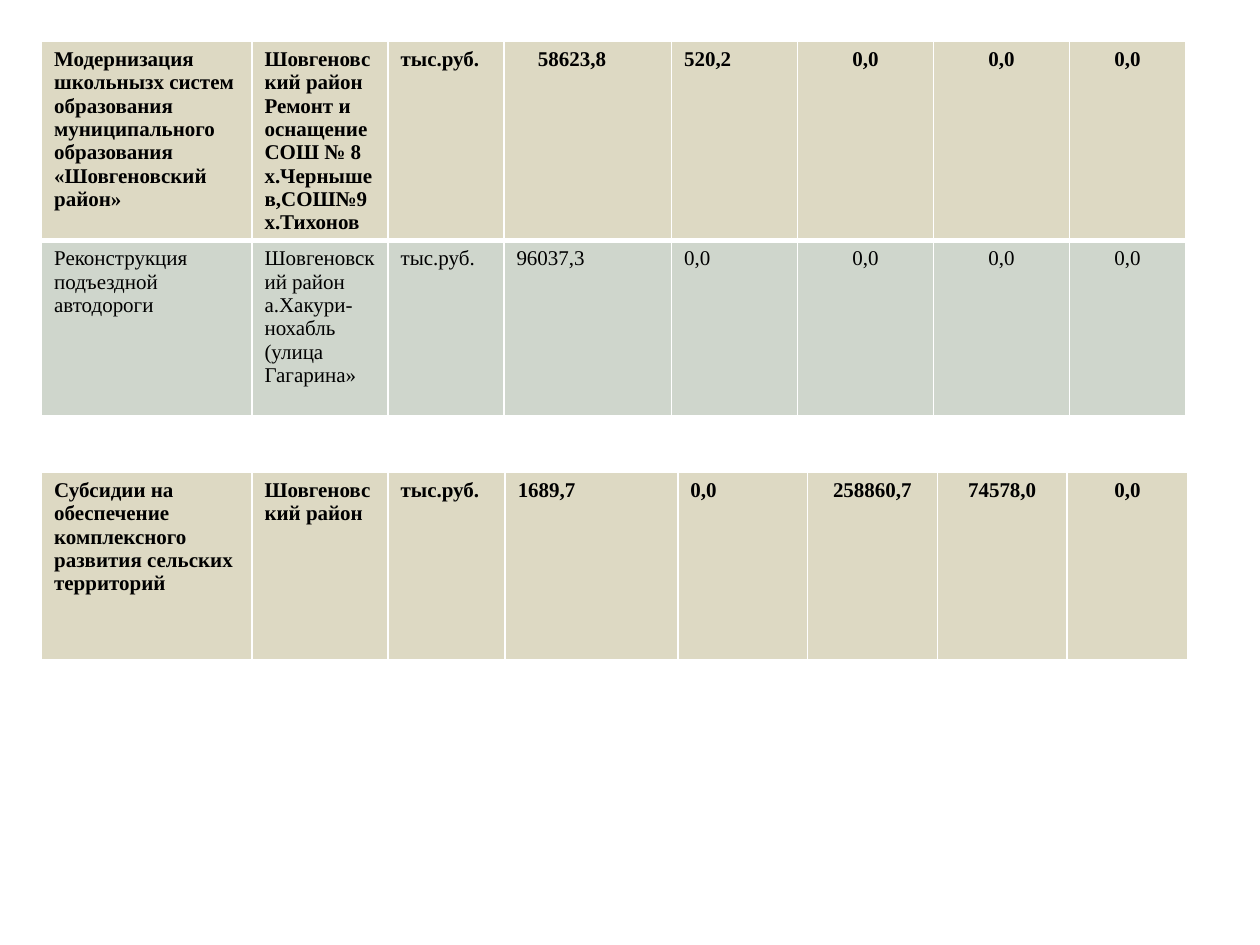
from lxml import etree
from pptx import Presentation
from pptx.dml.color import RGBColor
from pptx.enum.text import PP_ALIGN
from pptx.oxml.ns import qn
from pptx.util import Inches, Pt

CENTER = PP_ALIGN.CENTER
LEFT = PP_ALIGN.LEFT
BLACK = RGBColor(0x00, 0x00, 0x00)
WHITE = RGBColor(0xFF, 0xFF, 0xFF)
SAND = RGBColor(0xDD, 0xD9, 0xC3)
SAGE = RGBColor(0xCF, 0xD6, 0xCC)
FONT = "Times New Roman"
FIRST_CENTERED_COLUMN = 5


def add_border(cell, side, points):
    line = etree.SubElement(cell._tc.get_or_add_tcPr(), qn(f"a:ln{side}"), w=str(Pt(points)))
    fill = etree.SubElement(line, qn("a:solidFill"))
    etree.SubElement(fill, qn("a:srgbClr"), val=str(WHITE))


programs = [
    {
        "top": 0.33,
        "widths": [1.67, 1.08, 0.92, 1.33, 1, 1.08, 1.08, 0.92],
        "heights": [1.57, 1.39],
        "rows": [
            ["Модернизация школьнызх систем образования муниципального образования «Шовгеновский район»",
             "Шовгеновский район\nРемонт и оснащение СОШ № 8 х.Чернышев,СОШ№9 х.Тихонов",
             "тыс.руб.", "58623,8", "520,2", "0,0", "0,0", "0,0"],
            ["Реконструкция подъездной автодороги",
             "Шовгеновский район а.Хакури-нохабль\n(улица Гагарина»",
             "тыс.руб.", "96037,3", "0,0", "0,0", "0,0", "0,0"],
        ],
    },
    {
        "top": 3.75,
        "widths": [1.67, 1.08, 0.93, 1.37, 1.03, 1.03, 1.03, 0.96],
        "heights": [1.5],
        "rows": [
            ["Субсидии на обеспечение комплексного развития сельских территорий",
             "Шовгеновский район",
             "тыс.руб.", "1689,7", "0,0", "258860,7", "74578,0", "0,0"],
        ],
    },
]

prs = Presentation()
prs.slide_width = Inches(10)
prs.slide_height = Inches(7.5)
slide = prs.slides.add_slide(prs.slide_layouts[6])

for program in programs:
    rows, widths, heights = program["rows"], program["widths"], program["heights"]
    table = slide.shapes.add_table(
        len(rows), len(widths), Inches(0.33), Inches(program["top"]),
        Inches(sum(widths)), Inches(sum(heights))).table
    table.first_row = False
    table.horz_banding = False
    for column, width in zip(table.columns, widths):
        column.width = Inches(width)

    for row_index, values in enumerate(rows):
        is_main = row_index == 0
        table.rows[row_index].height = Inches(heights[row_index])
        borders = {"L": 1, "R": 1, "T": 1, "B": 3} if is_main else {"L": 1, "R": 1, "B": 1}
        for column_index, value in enumerate(values):
            cell = table.cell(row_index, column_index)
            for side, points in borders.items():
                add_border(cell, side, points)
            cell.fill.solid()
            cell.fill.fore_color.rgb = SAND if is_main else SAGE
            cell.text_frame.text = value
            for paragraph in cell.text_frame.paragraphs:
                paragraph.alignment = CENTER if column_index >= FIRST_CENTERED_COLUMN else LEFT
                for run in paragraph.runs:
                    run.font.name = FONT
                    run.font.size = Pt(12)
                    run.font.bold = is_main
                    run.font.color.rgb = BLACK
            if value == "58623,8":
                cell.margin_left = Inches(0.27)

prs.save("out.pptx")
